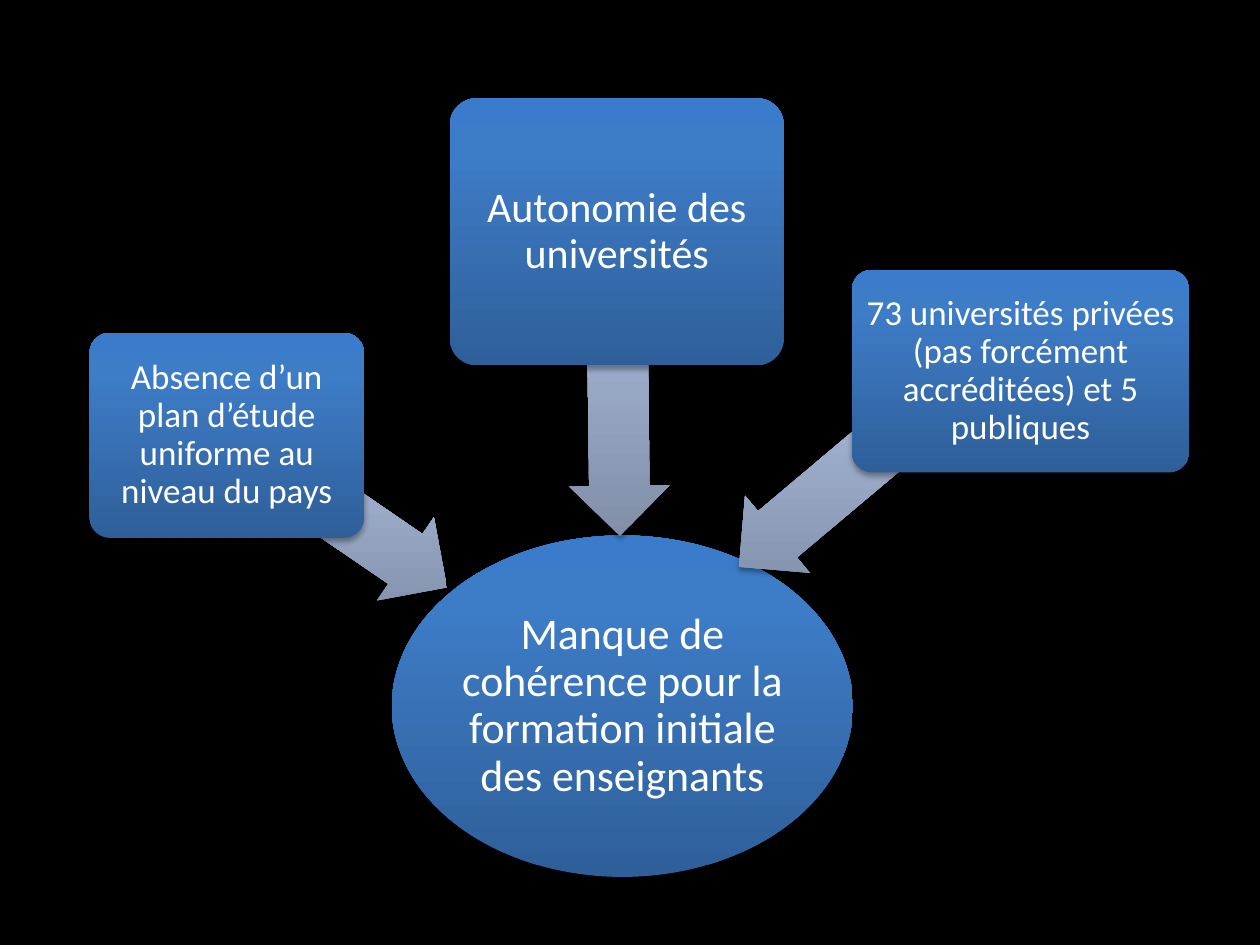
import copy
from dataclasses import dataclass

import lxml.etree
import pptx
import pptx.dml.color
import pptx.enum.shapes
import pptx.enum.text
import pptx.oxml.ns
import pptx.util

Inches = pptx.util.Inches
Kind = pptx.enum.shapes.MSO_SHAPE
qn = pptx.oxml.ns.qn

BLUE = ("2F5F99", "3D7CC7", "3A7CCB")
GREY = ("818FA8", "A7B9DA", "A7BADC")
STOPS = (0, 0.8, 1)


@dataclass
class Node:
    text: str
    left: float
    top: float
    width: float
    height: float
    size: int
    inset: float
    kind: int = Kind.ROUNDED_RECTANGLE


@dataclass
class Arrow:
    left: float
    top: float
    width: float
    turn: float


GOAL = Node("Manque de cohérence pour la formation initiale des enseignants",
            3.11, 4.25, 3.66, 2.71, 25, 0.02, Kind.OVAL)
CAUSES = [
    (Arrow(1.54, 3.64, 2.2, 214.4),
     Node("Absence d’un plan d’étude uniforme au niveau du pays",
          0.71, 2.64, 2.18, 1.63, 20, 0.04)),
    (Arrow(3.63, 2.58, 2.55, 269.3),
     Node("Autonomie des universités", 3.57, 0.78, 2.65, 2.12, 24, 0.05)),
    (Arrow(5.57, 3.29, 2.51, 319.9),
     Node("73 universités privées (pas forcément accréditées) et 5 publiques",
          6.76, 2.14, 2.68, 1.61, 20, 0.04)),
]


def color(code: str) -> pptx.dml.color.RGBColor:
    return pptx.dml.color.RGBColor.from_string(code)


def apply(target, values: dict) -> None:
    for name, value in values.items():
        setattr(target, name, value)


def shade(shape, codes: tuple) -> None:
    shape.line.fill.background()
    fill = shape.fill
    fill.gradient()
    fill.gradient_angle = 90
    props = shape._element.spPr
    grad = props.find(qn("a:gradFill"))
    grad.set("rotWithShape", "0")
    stops = grad.find(qn("a:gsLst"))
    stops.append(copy.deepcopy(stops[-1]))
    for stop, code, place in zip(fill.gradient_stops, codes, STOPS):
        stop.color.rgb = color(code)
        stop.position = place


def drop(shape) -> None:
    shape.shadow.inherit = False
    effects = shape._element.spPr.find(qn("a:effectLst"))
    outer = lxml.etree.SubElement(
        effects, qn("a:outerShdw"), blurRad="40000", dist="23000",
        dir="5400000", rotWithShape="0")
    tint = lxml.etree.SubElement(outer, qn("a:srgbClr"), val="000000")
    lxml.etree.SubElement(tint, qn("a:alpha"), val="35000")


def add(slide, kind: int, box: tuple, codes: tuple):
    shape = slide.shapes.add_shape(kind, *map(Inches, box))
    shade(shape, codes)
    drop(shape)
    return shape


def draw_node(slide, node: Node) -> None:
    box = (node.left, node.top, node.width, node.height)
    shape = add(slide, node.kind, box, BLUE)
    if node.kind == Kind.ROUNDED_RECTANGLE:
        shape.adjustments[0] = 0.1
    frame = shape.text_frame
    frame.text = node.text
    inset = Inches(node.inset)
    apply(frame, {
        "word_wrap": True,
        "vertical_anchor": pptx.enum.text.MSO_ANCHOR.MIDDLE,
        "margin_left": inset, "margin_right": inset,
        "margin_top": inset, "margin_bottom": inset,
    })
    para = frame.paragraphs[0]
    apply(para, {"alignment": pptx.enum.text.PP_ALIGN.CENTER,
                 "line_spacing": 0.9})
    font = para.runs[0].font
    apply(font, {"name": "Calibri", "size": pptx.util.Pt(node.size)})
    font.color.rgb = color("FFFFFF")


def draw_arrow(slide, arrow: Arrow) -> None:
    box = (arrow.left, arrow.top, arrow.width, 0.8)
    shape = add(slide, Kind.LEFT_ARROW, box, GREY)
    shape.rotation = arrow.turn
    shape.adjustments[0] = 0.6
    shape.adjustments[1] = 0.5


def main() -> None:
    deck = pptx.Presentation()
    apply(deck, {"slide_width": Inches(10), "slide_height": Inches(7.5)})
    slide = deck.slides.add_slide(deck.slide_layouts[6])
    back = slide.background.fill
    back.solid()
    back.fore_color.rgb = color("000000")
    draw_node(slide, GOAL)
    for arrow, node in CAUSES:
        draw_arrow(slide, arrow)
        draw_node(slide, node)
    deck.save("out.pptx")


if __name__ == "__main__":
    main()
